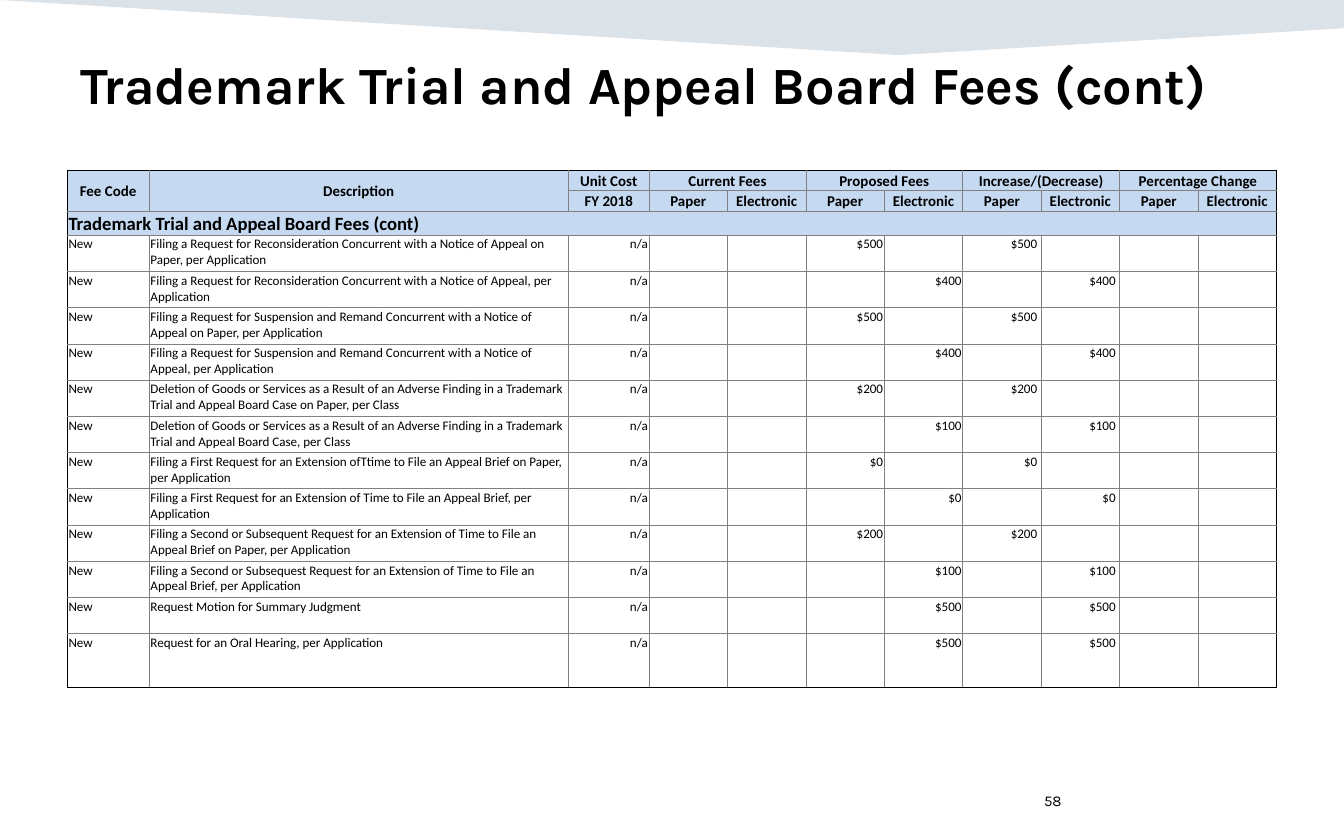
from lxml import etree
from pptx import Presentation
from pptx import util as u
from pptx.dml.color import RGBColor
from pptx.enum import text
from pptx.oxml import ns

BLACK, GRAY, HEADER_BLUE, BAND_BLUE = "000000", "808080", "C5D9F1", "164469"
TABLE_WIDTH = 9
LEAD_WIDTHS = [0.61, 3.12, 0.6]
COLUMN_WIDTHS = LEAD_WIDTHS + [(TABLE_WIDTH - sum(LEAD_WIDTHS)) / 8] * 8
ROW_HEIGHTS = [0.15, 0.15, 0.18] + [0.27] * 11 + [0.4]
GROUPS = ["Current Fees", "Proposed Fees", "Increase/(Decrease)", "Percentage Change"]
SECTION = "Trademark Trial and Appeal Board Fees (cont)"
PAPER, ELECTRONIC = 0, 1
PROPOSED_COLUMN, INCREASE_COLUMN = 5, 7
FEES = [
    ("Filing a Request for Reconsideration Concurrent with a Notice of Appeal on Paper, per Application", PAPER, "$500"),
    ("Filing a Request for Reconsideration Concurrent with a Notice of Appeal, per Application", ELECTRONIC, "$400"),
    ("Filing a Request for Suspension and Remand Concurrent with a Notice of Appeal on Paper, per Application",
     PAPER, "$500"),
    ("Filing a Request for Suspension and Remand Concurrent with a Notice of Appeal, per Application",
     ELECTRONIC, "$400"),
    ("Deletion of Goods or Services as a Result of an Adverse Finding in a Trademark Trial and Appeal Board Case "
     "on Paper, per Class", PAPER, "$200"),
    ("Deletion of Goods or Services as a Result of an Adverse Finding in a Trademark Trial and Appeal Board Case, "
     "per Class", ELECTRONIC, "$100"),
    ("Filing a First Request for an Extension ofTtime to File an Appeal Brief on Paper, per Application", PAPER, "$0"),
    ("Filing a First Request for an Extension of Time to File an Appeal Brief, per Application", ELECTRONIC, "$0"),
    ("Filing a Second or Subsequent Request for an Extension of Time to File an Appeal Brief on Paper, "
     "per Application", PAPER, "$200"),
    ("Filing a Second or Subsequest Request for an Extension of Time to File an Appeal Brief, per Application",
     ELECTRONIC, "$100"),
    ("Request Motion for Summary Judgment", ELECTRONIC, "$500"),
    ("Request for an Oral Hearing, per Application", ELECTRONIC, "$500"),
]


def color(value):
    """Turn a hex string into a colour."""
    return RGBColor.from_string(value)


def format_paragraph(paragraph, name, size, bold=False, align=text.PP_ALIGN.LEFT):
    """Set the font and alignment of a paragraph."""
    paragraph.alignment = align
    font = paragraph.font
    font.name, font.size, font.bold = name, u.Pt(size), bold
    font.color.rgb = color(BLACK)


def add_band(slide):
    """Draw the pale band behind the top of the slide."""
    corners = [(u.Inches(x), u.Inches(y)) for x, y in ((10, 0), (10, 0.21), (6.69, 0.41))]
    builder = slide.shapes.build_freeform(0, 0)
    builder.add_line_segments(corners)
    shape = builder.convert_to_shape()
    shape.shadow.inherit = False
    shape.line.fill.background()
    shape.fill.solid()
    shape.fill.fore_color.rgb = color(BAND_BLUE)
    fill_color = shape._element.spPr.find(".//" + ns.qn("a:srgbClr"))
    etree.SubElement(fill_color, ns.qn("a:alpha"), val="15000")
    slide.shapes._spTree.insert(2, shape._element)


def add_title(slide, wording):
    """Place the slide title."""
    title = slide.shapes.title
    title.left, title.top, title.width, title.height = map(u.Inches, (0.5, 0.34, 9.17, 0.64))
    title.text_frame.text = wording
    title.text_frame.vertical_anchor = text.MSO_ANCHOR.TOP
    format_paragraph(title.text_frame.paragraphs[0], "Karla", 28, bold=True)


def add_page_number(slide, number):
    """Write the page number at the bottom right."""
    frame = slide.shapes.add_textbox(*map(u.Inches, (7.67, 5.79, 2.33, 0.33))).text_frame
    frame.word_wrap = True
    frame.vertical_anchor = text.MSO_ANCHOR.MIDDLE
    frame.text = number
    format_paragraph(frame.paragraphs[0], "Karla", 8)


def set_borders(cell, edges):
    """Draw thin cell borders, given a colour for each side."""
    properties = cell._tc.get_or_add_tcPr()
    for side, value in edges.items():
        line = etree.SubElement(properties, ns.qn("a:ln" + side), w=str(u.Pt(0.5)))
        fill = etree.SubElement(line, ns.qn("a:solidFill"))
        etree.SubElement(fill, ns.qn("a:srgbClr"), val=value)


def format_cell(cell, row, column):
    """Style a cell by its place in the fee table."""
    last_row, last_column = len(ROW_HEIGHTS), len(COLUMN_WIDTHS)
    set_borders(cell, {
        "L": BLACK if column == 0 else GRAY,
        "R": BLACK if column + cell.span_width == last_column else GRAY,
        "T": BLACK if row == 0 else GRAY,
        "B": BLACK if row + cell.span_height == last_row else GRAY,
    })
    if row <= 2:
        cell.fill.solid()
        cell.fill.fore_color.rgb = color(HEADER_BLUE)
    else:
        cell.fill.background()
    cell.margin_left = cell.margin_top = u.Inches(0.01)
    cell.margin_right = u.Inches(0.03 if row > 2 and column >= INCREASE_COLUMN else 0.01)
    cell.margin_bottom = 0
    cell.vertical_anchor = text.MSO_ANCHOR.TOP
    align = text.PP_ALIGN.LEFT
    if row < 2:
        align = text.PP_ALIGN.CENTER
        bottom = row == 1 and column > 2
        cell.vertical_anchor = text.MSO_ANCHOR.BOTTOM if bottom else text.MSO_ANCHOR.MIDDLE
    elif row > 2 and column >= 2:
        align = text.PP_ALIGN.RIGHT
    size = 8 if row < 2 else 10 if row == 2 else 7
    paragraph = cell.text_frame.paragraphs[0]
    format_paragraph(paragraph, "Calibri", size, bold=row <= 2, align=align)
    if not cell.text:
        etree.SubElement(paragraph._p, ns.qn("a:endParaRPr"), sz=str(size * 100))


def fill_headings(table):
    """Write and merge the heading cells."""
    for column, heading in enumerate(["Fee Code", "Description"]):
        table.cell(0, column).text = heading
        table.cell(0, column).merge(table.cell(1, column))
    table.cell(0, 2).text, table.cell(1, 2).text = "Unit Cost", "FY 2018"
    for index, group in enumerate(GROUPS):
        column = 3 + 2 * index
        table.cell(0, column).text = group
        table.cell(0, column).merge(table.cell(0, column + 1))
        table.cell(1, column).text, table.cell(1, column + 1).text = "Paper", "Electronic"
    table.cell(2, 0).text = SECTION
    table.cell(2, 0).merge(table.cell(2, len(COLUMN_WIDTHS) - 1))


def add_fee_table(slide):
    """Build the table of proposed fees."""
    frame = slide.shapes.add_table(
        len(ROW_HEIGHTS), len(COLUMN_WIDTHS), u.Inches(0.5), u.Inches(1.27),
        u.Inches(TABLE_WIDTH), u.Inches(sum(ROW_HEIGHTS)))
    table = frame.table
    table.first_row = table.horz_banding = False
    for column, width in zip(table.columns, COLUMN_WIDTHS):
        column.width = u.Inches(width)
    for row, height in zip(table.rows, ROW_HEIGHTS):
        row.height = u.Inches(height)
    fill_headings(table)
    for row, (description, method, fee) in enumerate(FEES, start=3):
        entries = {0: "New", 1: description, 2: "n/a",
                   PROPOSED_COLUMN + method: fee, INCREASE_COLUMN + method: fee}
        for column, entry in entries.items():
            table.cell(row, column).text = entry
    for row in range(len(ROW_HEIGHTS)):
        for column in range(len(COLUMN_WIDTHS)):
            format_cell(table.cell(row, column), row, column)


def main():
    """Build and save the fee slide."""
    presentation = Presentation()
    presentation.slide_width, presentation.slide_height = u.Inches(10), u.Inches(6.25)
    slide = presentation.slides.add_slide(presentation.slide_layouts[5])
    add_band(slide)
    add_title(slide, SECTION)
    add_page_number(slide, "58")
    add_fee_table(slide)
    presentation.save("out.pptx")


if __name__ == "__main__":
    main()
